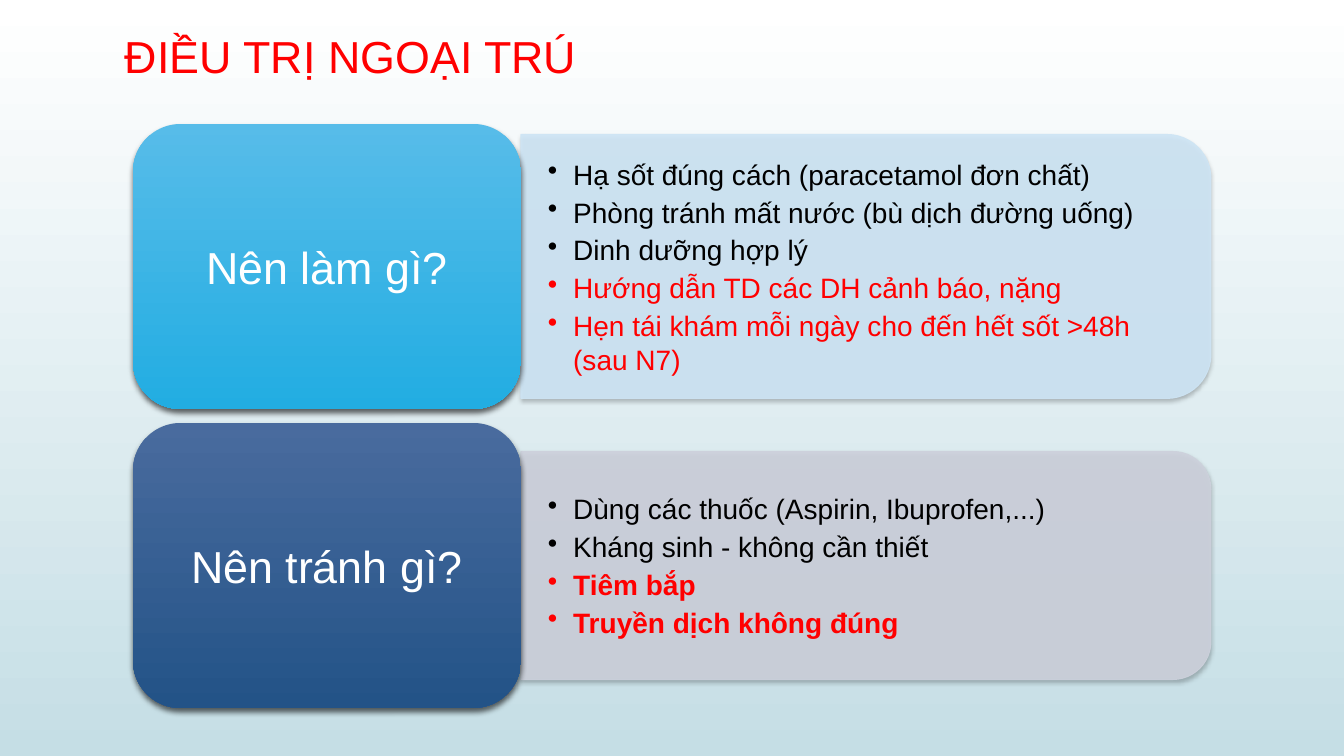
from dataclasses import dataclass

from lxml.etree import SubElement
from pptx import Presentation
from pptx.dml.color import RGBColor as RGB
from pptx.enum.shapes import MSO_SHAPE as SHAPE
from pptx.enum.text import MSO_ANCHOR as ANCHOR, MSO_AUTO_SIZE as AUTO, PP_ALIGN as ALIGN
from pptx.oxml.ns import qn
from pptx.util import Emu, Pt


@dataclass(frozen=True)
class Theme:
    font: str = "Arial"
    heading_size: int = 32
    bullet_size: int = 20
    background: tuple = ("FFFFFF", "C5DEE5")
    do_card: tuple = ("57BCE9", "22ADE2")
    avoid_card: tuple = ("496B9E", "235387")
    do_panel: str = "CEE5F5"
    avoid_panel: str = "CDD1DC"
    black: str = "000000"
    red: str = "FF0000"
    white: str = "FFFFFF"


theme = Theme()
PX = 914400 / 100.8  # EMU per pixel


def px(*lengths):
    return [Emu(round(length * PX)) for length in lengths]


def add_run(paragraph, text, size, color, bold=False):
    run = paragraph.add_run()
    run.text = text
    run.font.name = theme.font
    run.font.size = Pt(size)
    run.font.bold = bold
    run.font.color.rgb = RGB.from_string(color)


prs = Presentation()
prs.slide_width, prs.slide_height = px(1344, 756)
slide = prs.slides.add_slide(prs.slide_layouts[5])
gradients = [(slide.background.fill, theme.background)]
shadows = []

# Title
title = slide.shapes.title
title.left, title.top, title.width, title.height = px(103, 19, 1134, 84)
title_frame = title.text_frame
title_frame.auto_size = AUTO.NONE
title_frame.word_wrap = True
title_frame.vertical_anchor = ANCHOR.TOP
title_frame.margin_left, title_frame.margin_top = px(22, 10)
title_frame.paragraphs[0].alignment = ALIGN.LEFT
add_run(title_frame.paragraphs[0], "ĐIỀU TRỊ NGOẠI TRÚ", theme.heading_size, theme.red)

# Advice rows: question, card colours, panel colour, panel height, bullets
rows = [
    ("Nên làm gì?", theme.do_card, theme.do_panel, 264, [
        ("Hạ sốt đúng cách (paracetamol đơn chất)", theme.black, False),
        ("Phòng tránh mất nước (bù dịch đường uống)", theme.black, False),
        ("Dinh dưỡng hợp lý", theme.black, False),
        ("Hướng dẫn TD các DH cảnh báo, nặng", theme.red, False),
        ("Hẹn tái khám mỗi ngày cho đến hết sốt >48h (sau N7)", theme.red, False),
    ]),
    ("Nên tránh gì?", theme.avoid_card, theme.avoid_panel, 228, [
        ("Dùng các thuốc (Aspirin, Ibuprofen,...)", theme.black, False),
        ("Kháng sinh - không cần thiết", theme.black, False),
        ("Tiêm bắp", theme.red, True),
        ("Truyền dịch không đúng", theme.red, True),
    ]),
]
CARD_LEFT, CARD_TOP, CARD_W, CARD_H, ROW_PITCH = 133, 124, 388, 285, 299
PANEL_LEFT, PANEL_W = CARD_LEFT + CARD_W, 690

for index, (question, card_colors, panel_color, panel_h, bullets) in enumerate(rows):
    card_top = CARD_TOP + index * ROW_PITCH
    middle = card_top + CARD_H / 2

    # Panel turned a quarter so that its rounded corners face right
    panel = slide.shapes.add_shape(
        SHAPE.ROUND_2_SAME_RECTANGLE,
        *px(PANEL_LEFT + (PANEL_W - panel_h) / 2, middle - PANEL_W / 2, panel_h, PANEL_W))
    panel.rotation = 90
    panel.fill.solid()
    panel.fill.fore_color.rgb = RGB.from_string(panel_color)
    panel.line.color.rgb = RGB.from_string(panel_color)
    panel.line.width = Pt(0.75)
    for color in panel._element.spPr.iter(qn("a:srgbClr")):
        SubElement(color, qn("a:alpha"), val="90000")
    shadows.append((panel, 3, 2, 25))

    # Bullets
    advice = slide.shapes.add_textbox(
        *px(PANEL_LEFT, middle - panel_h / 2 + 12, PANEL_W - 13, panel_h - 24)).text_frame
    advice.word_wrap = True
    advice.vertical_anchor = ANCHOR.MIDDLE
    advice.margin_left, advice.margin_right = px(27, 27)
    advice.margin_top, advice.margin_bottom = px(14, 14)
    for number, (text, color, bold) in enumerate(bullets):
        item = advice.add_paragraph() if number else advice.paragraphs[0]
        item.level = 1
        item.space_after = Pt(3)
        props = item._p.get_or_add_pPr()
        props.set("marL", "228600")
        props.set("indent", "-228600")
        SubElement(props, qn("a:buChar"), char="•")
        add_run(item, text, theme.bullet_size, color, bold)

    # Question card
    card = slide.shapes.add_shape(
        SHAPE.ROUNDED_RECTANGLE, *px(CARD_LEFT, card_top, CARD_W, CARD_H))
    card.line.fill.background()
    gradients.append((card.fill, card_colors))
    shadows.append((card, 4, 3, 60))
    card.text_frame.word_wrap = True
    card.text_frame.vertical_anchor = ANCHOR.MIDDLE
    heading = card.text_frame.paragraphs[0]
    heading.alignment = ALIGN.CENTER
    add_run(heading, question, theme.heading_size, theme.white)

# Vertical gradients
for fill, colors in gradients:
    fill.gradient()
    fill.gradient_angle = 270
    for stop, position, color in zip(fill.gradient_stops, (0, 1), colors):
        stop.position = position
        stop.color.rgb = RGB.from_string(color)

# Soft shadows falling straight down
for shape, blur, distance, opacity in shadows:
    shape.shadow.inherit = False
    effects = shape._element.spPr.find(qn("a:effectLst"))
    shadow = SubElement(effects, qn("a:outerShdw"), blurRad=str(Pt(blur)),
                        dist=str(Pt(distance)), dir="5400000", rotWithShape="0")
    shade = SubElement(shadow, qn("a:srgbClr"), val=theme.black)
    SubElement(shade, qn("a:alpha"), val=str(opacity * 1000))

prs.save("out.pptx")
